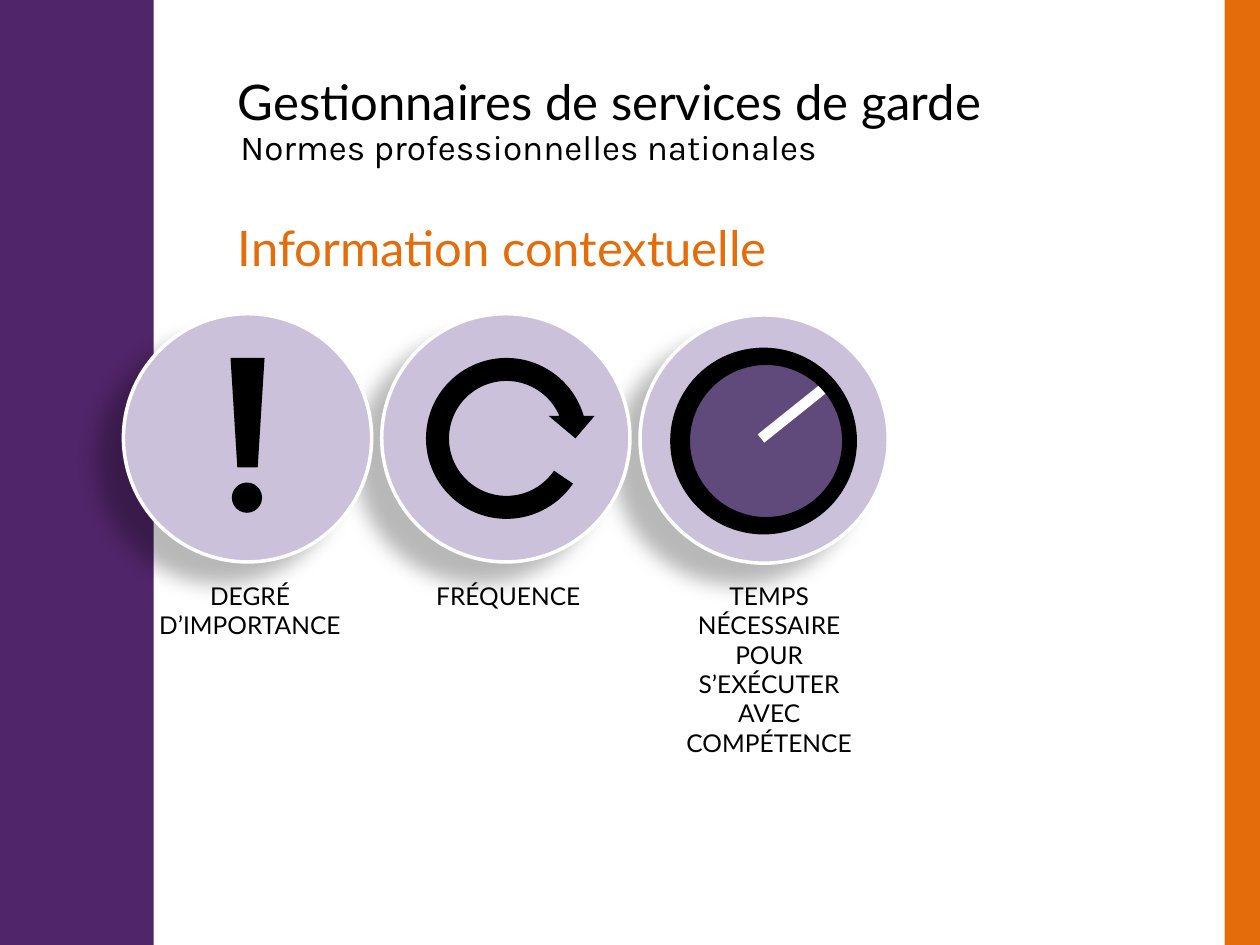
"""Build the contextual information slide with its three icon circles."""
from lxml import etree
from pptx import Presentation
from pptx.dml.color import RGBColor
from pptx.enum.shapes import MSO_CONNECTOR, MSO_SHAPE
from pptx.enum.text import MSO_AUTO_SIZE, PP_ALIGN
from pptx.oxml.ns import qn
from pptx.util import Inches, Pt

RECTANGLE = MSO_SHAPE.RECTANGLE
OVAL = MSO_SHAPE.OVAL
ARROW = MSO_SHAPE.CIRCULAR_ARROW
TRAPEZOID = MSO_SHAPE.FLOWCHART_MANUAL_OPERATION
DISC = MSO_SHAPE.FLOWCHART_CONNECTOR
DONUT = MSO_SHAPE.DONUT
STRAIGHT = MSO_CONNECTOR.STRAIGHT
GROW = MSO_AUTO_SIZE.SHAPE_TO_FIT_TEXT
LEFT, CENTER = PP_ALIGN.LEFT, PP_ALIGN.CENTER

BLACK = RGBColor(0x00, 0x00, 0x00)
WHITE = RGBColor(0xFF, 0xFF, 0xFF)
PURPLE = RGBColor(0x51, 0x25, 0x69)
ORANGE = RGBColor(0xE4, 0x6C, 0x0A)
LILAC = RGBColor(0xCC, 0xC1, 0xDA)
VIOLET = RGBColor(0x60, 0x4A, 0x7B)

BANDS = [((0, 0, 1.22, 7.5), PURPLE), ((9.72, 0, 0.28, 7.5), ORANGE)]
HEADINGS = [
    ("Gestionnaires de services de garde", (1.79, 0.52, 7.36, 0.57), 28, "Lato", BLACK),
    ("Normes professionnelles nationales", (1.81, 0.95, 7.36, 0.44), 20, "Karla", BLACK),
    ("Information contextuelle", (1.79, 1.68, 7.36, 0.57), 28, "Lato", ORANGE),
]
CRITERIA = [
    ("DEGRÉ D’IMPORTANCE", 2.49, 1.12, 0.57),
    ("FRÉQUENCE", 2.49, 3.17, 0.34),
    ("TEMPS NÉCESSAIRE POUR S’EXÉCUTER AVEC COMPÉTENCE", 2.5, 5.24, 1.51),
]
ICONS = [
    (ARROW, (3.29, 2.75, 1.46, 1.46), BLACK, None, (0.125, 11.423, 204.577, 20.511, 0.125)),
    (TRAPEZOID, (1.83, 2.84, 0.27, 0.87), BLACK, None, ()),
    (DISC, (1.84, 3.83, 0.24, 0.24), BLACK, None, ()),
    (DISC, (5.35, 2.79, 1.42, 1.42), VIOLET, (BLACK, 4.5), ()),
]
DIAL_HAND = (6.04, 3.48, 6.59, 3.04)
DIAL_RING = (DONUT, (5.37, 2.79, 1.42, 1.42), BLACK, None, (0.075,))
CIRCLE_LEFT, CIRCLE_STEP, CIRCLE_SIZE = 0.98, 2.05, 1.97
LABEL_TOP, LABEL_WIDTH = 4.56, 1.73


def inches(values):
    return [Inches(value) for value in values]


def add_figure(page, kind, place, fill, line=None, adjustments=()):
    figure = page.shapes.add_shape(kind, *inches(place))
    figure.shadow.inherit = False
    figure.fill.solid()
    figure.fill.fore_color.rgb = fill
    if line:
        figure.line.color.rgb = line[0]
        figure.line.width = Pt(line[1])
    else:
        figure.line.fill.background()
    for index, value in enumerate(adjustments):
        figure.adjustments[index] = value
    return figure


def cast_shadow(figure):
    effects = figure.element.spPr.find(qn("a:effectLst"))
    shadow = etree.SubElement(
        effects, qn("a:outerShdw"), blurRad=str(Pt(11.8)), dist=str(Pt(19.7)),
        dir=str(141 * 60000), algn="ctr", rotWithShape="0")
    color = etree.SubElement(shadow, qn("a:srgbClr"), val=str(BLACK))
    etree.SubElement(color, qn("a:alpha"), val="28000")


def add_text(page, text, place, size, font, color, align=LEFT):
    box = page.shapes.add_textbox(*inches(place))
    frame = box.text_frame
    frame.word_wrap = True
    frame.auto_size = GROW
    para = frame.paragraphs[0]
    para.alignment = align
    span = para.add_run()
    span.text = text
    span.font.size = Pt(size)
    span.font.name = font
    span.font.color.rgb = color


def add_hand(page):
    hand = page.shapes.add_connector(STRAIGHT, *inches(DIAL_HAND))
    hand.line.color.rgb = WHITE
    hand.line.width = Pt(6)
    etree.SubElement(hand.element.spPr, qn("a:effectLst"))


def main():
    deck = Presentation()
    deck.slide_width, deck.slide_height = Inches(10), Inches(7.5)
    page = deck.slides.add_slide(deck.slide_layouts[6])

    for place, color in BANDS:
        add_figure(page, RECTANGLE, place, color)
    for heading in HEADINGS:
        add_text(page, *heading)

    circles = [(CIRCLE_LEFT + index * CIRCLE_STEP, top, CIRCLE_SIZE, CIRCLE_SIZE)
               for index, (_, top, _, _) in enumerate(CRITERIA)]
    for place in circles:
        cast_shadow(add_figure(page, OVAL, place, LILAC))
    for place in circles:
        add_figure(page, OVAL, place, LILAC, (WHITE, 2))

    for icon in ICONS:
        add_figure(page, *icon)
    add_hand(page)
    add_figure(page, *DIAL_RING)

    for text, _, left, height in CRITERIA:
        place = (left, LABEL_TOP, LABEL_WIDTH, height)
        add_text(page, text, place, 14, "Lato", BLACK, CENTER)
    deck.save("out.pptx")


if __name__ == "__main__":
    main()
